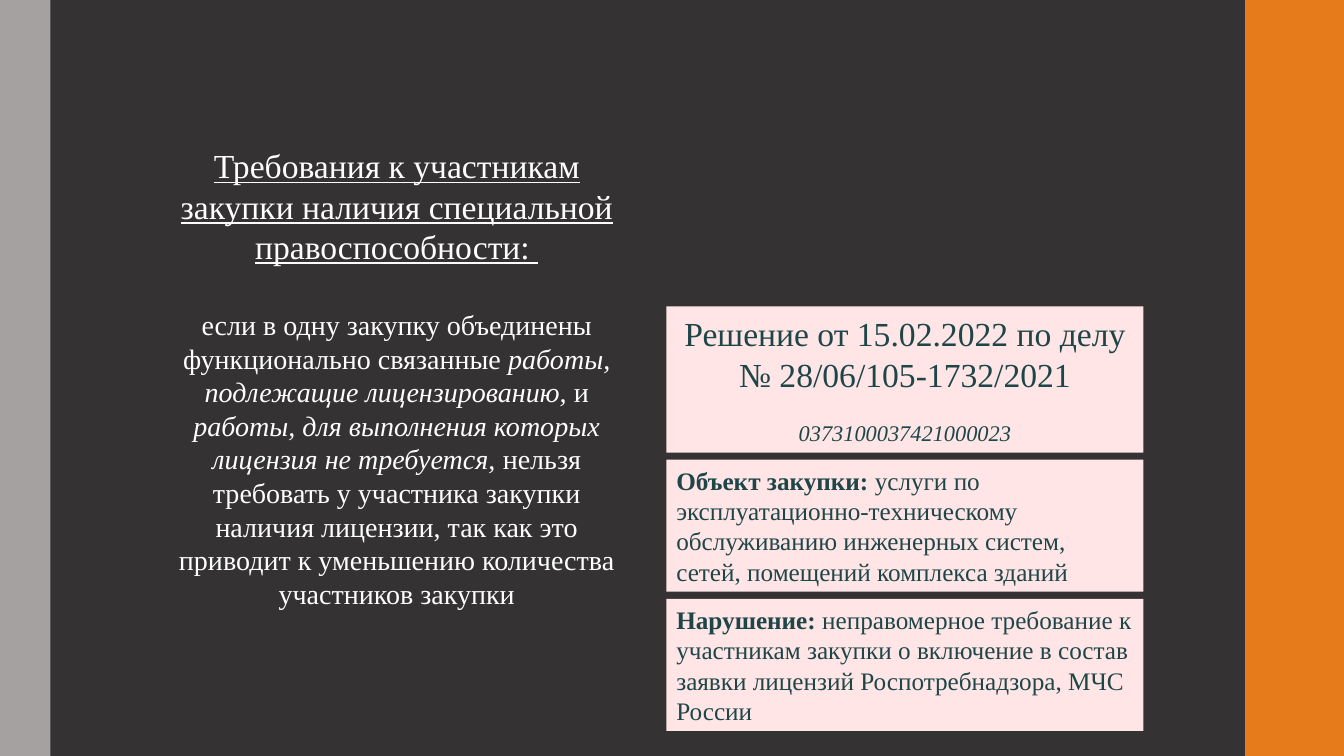
from dataclasses import dataclass

from lxml.etree import SubElement
from pptx import Presentation
from pptx.dml.color import RGBColor
from pptx.enum.shapes import MSO_SHAPE as Shape
from pptx.enum.text import MSO_ANCHOR as Anchor, MSO_AUTO_SIZE as AutoSize, PP_ALIGN as Align
from pptx.oxml.ns import qn
from pptx.util import Inches, Pt


@dataclass(frozen=True)
class Theme:
    font: str = "Times New Roman"
    background: str = "343232"
    left_band: str = "A6A1A1"
    right_band: str = "E57B1B"
    card: str = "FFE5E5"
    light_text: str = "FFFFFF"
    card_text: str = "1E4649"
    heading_size: int = 24
    body_size: int = 20
    card_size: int = 18
    number_size: int = 16


THEME = Theme()
HEADING = "Требования к участникам закупки наличия специальной правоспособности: "
RULE = [
    ("если в одну закупку объединены функционально связанные ", ""),
    ("работы, подлежащие лицензированию,", "italic"),
    (" и ", ""),
    ("работы, для выполнения которых лицензия не требуется, ", "italic"),
    ("нельзя требовать у участника закупки наличия лицензии, так как это "
     "приводит к уменьшению количества участников закупки", ""),
]
DECISION = [("Решение от 15.02.2022 по делу № 28/06/105-1732/2021", "")]
PURCHASE_NUMBER = [("0373100037421000023", "italic")]
DETAILS = [
    [("Объект закупки: ", "bold"),
     ("услуги по эксплуатационно-техническому обслуживанию инженерных систем, "
      "сетей, помещений комплекса зданий", "")],
    [("Нарушение: ", "bold"),
     ("неправомерное требование к участникам закупки о включение в состав "
      "заявки лицензий Роспотребнадзора, МЧС России", "")],
]
CARD_LEFT, CARD_WIDTH, CARD_GAP = 6.61, 4.73, 0.07
DECISION_TOP, DECISION_HEIGHT, DETAIL_HEIGHT = 3.04, 1.45, 1.31


def write(paragraph, runs, size, color, align=Align.CENTER):
    """Fill a paragraph with (text, style) runs; style is '', 'bold', 'italic' or 'underline'."""
    paragraph.alignment = align
    paragraph.line_spacing = 1.0
    paragraph.space_before = Pt(0)
    for text, style in runs:
        run = paragraph.add_run()
        run.text = text
        run.font.name = THEME.font
        run.font.size = Pt(size)
        run.font.color.rgb = RGBColor.from_string(color)
        if style:
            setattr(run.font, style, True)


def add_block(slide, left, top, width, height, color):
    block = slide.shapes.add_shape(
        Shape.RECTANGLE, Inches(left), Inches(top), Inches(width), Inches(height))
    block.shadow.inherit = False
    block.fill.solid()
    block.fill.fore_color.rgb = RGBColor.from_string(color)
    block.line.fill.background()
    return block


def add_card(slide, top, height):
    """Add a card of the right column and return its text frame."""
    frame = add_block(slide, CARD_LEFT, top, CARD_WIDTH, height, THEME.card).text_frame
    frame.word_wrap = True
    frame.vertical_anchor = Anchor.MIDDLE
    return frame


def place(placeholder, top, height):
    """Move a placeholder into the left column and return its first paragraph."""
    placeholder.left, placeholder.top = Inches(1.67), Inches(top)
    placeholder.width, placeholder.height = Inches(4.53), Inches(height)
    frame = placeholder.text_frame
    frame.word_wrap = True
    frame.auto_size = AutoSize.NONE
    frame.vertical_anchor = Anchor.TOP
    return frame.paragraphs[0]


def remove_bullet(paragraph):
    properties = paragraph._p.get_or_add_pPr()
    properties.set("marL", "0")
    properties.set("indent", "0")
    SubElement(properties, qn("a:buNone"))


def main():
    deck = Presentation()
    deck.slide_width, deck.slide_height = Inches(13.33), Inches(7.5)
    slide = deck.slides.add_slide(deck.slide_layouts[1])
    slide.background.fill.solid()
    slide.background.fill.fore_color.rgb = RGBColor.from_string(THEME.background)

    add_block(slide, 12.35, 0, 0.98, 7.5, THEME.right_band)
    add_block(slide, 0, 0, 0.5, 7.5, THEME.left_band)

    heading = place(slide.shapes.title, 1.39, 1.3)
    write(heading, [(HEADING, "underline")], THEME.heading_size, THEME.light_text)
    rule = place(slide.placeholders[1], 3.0, 3.14)
    write(rule, RULE, THEME.body_size, THEME.light_text)
    remove_bullet(rule)

    decision = add_card(slide, DECISION_TOP, DECISION_HEIGHT)
    write(decision.paragraphs[0], DECISION, THEME.heading_size, THEME.card_text)
    number = decision.add_paragraph()
    write(number, PURCHASE_NUMBER, THEME.number_size, THEME.card_text)
    number.space_before = Pt(18)

    first_top = DECISION_TOP + DECISION_HEIGHT + CARD_GAP
    for index, runs in enumerate(DETAILS):
        detail = add_card(slide, first_top + index * (DETAIL_HEIGHT + CARD_GAP), DETAIL_HEIGHT)
        write(detail.paragraphs[0], runs, THEME.card_size, THEME.card_text, Align.LEFT)

    deck.save("out.pptx")


if __name__ == "__main__":
    main()
